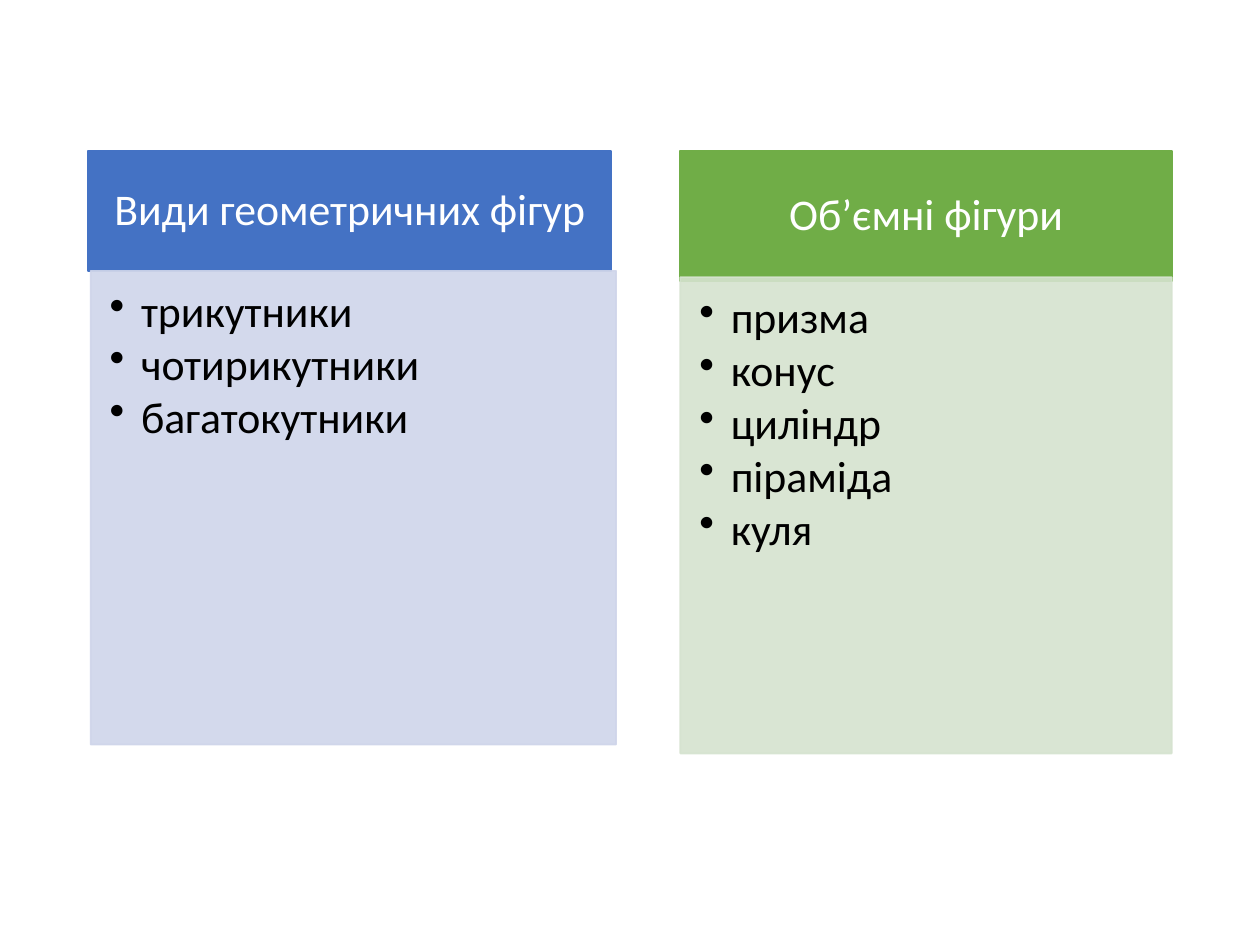
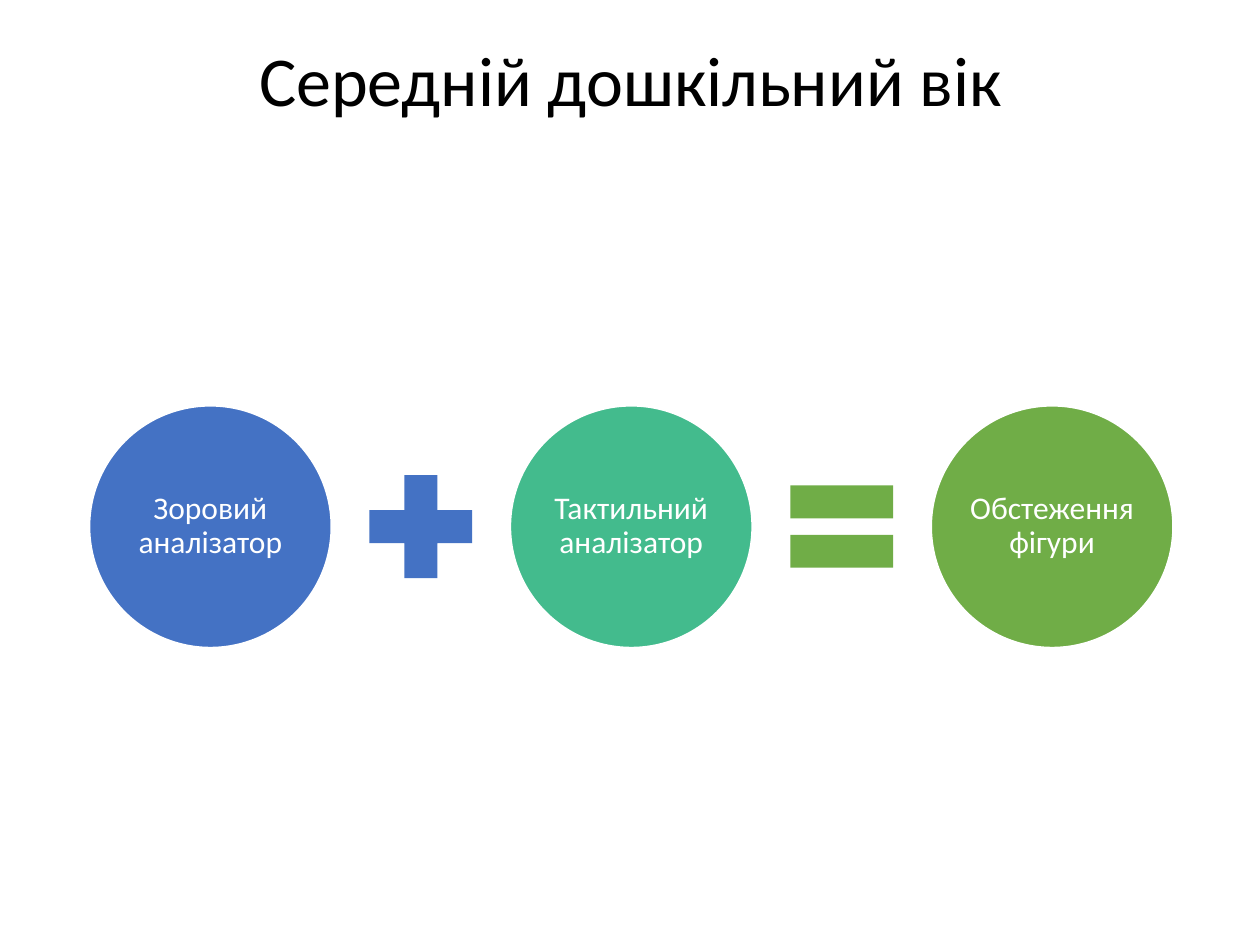
import pptx
import pptx.util
import pptx.dml.color
import pptx.enum.shapes
import pptx.enum.text
import pptx.oxml
import pptx.oxml.ns
from pptx.util import Inches

RGBColor = pptx.dml.color.RGBColor
MSO_SHAPE = pptx.enum.shapes.MSO_SHAPE
PP_ALIGN = pptx.enum.text.PP_ALIGN
MSO_ANCHOR = pptx.enum.text.MSO_ANCHOR

BLUE = RGBColor(0x44, 0x72, 0xC4)
TEAL = RGBColor(0x43, 0xBB, 0x8D)
GREEN = RGBColor(0x70, 0xAD, 0x47)
PALE_BLUE = RGBColor(0xCF, 0xD5, 0xEA)
PALE_GREEN = RGBColor(0xD5, 0xE3, 0xCF)
WHITE = RGBColor(0xFF, 0xFF, 0xFF)
BLACK = RGBColor(0x00, 0x00, 0x00)
FONT = "Calibri"


def add_figure(slide, kind, box, fill, line=None):
    shape = slide.shapes.add_shape(kind, *[Inches(length) for length in box])
    shape.shadow.inherit = False
    shape.fill.solid()
    shape.fill.fore_color.rgb = fill
    if line is None:
        shape.line.fill.background()
    else:
        shape.line.color.rgb = line
        shape.line.width = pptx.util.Pt(1)
    return shape


def write_text(shape, lines, size, color, insets, centered=True):
    frame = shape.text_frame
    frame.word_wrap = True
    frame.vertical_anchor = MSO_ANCHOR.MIDDLE if centered else MSO_ANCHOR.TOP
    frame.margin_left, frame.margin_top, frame.margin_right, frame.margin_bottom = [
        Inches(inset) for inset in insets
    ]
    frame.text = "\n".join(lines)
    for paragraph in frame.paragraphs:
        paragraph.alignment = PP_ALIGN.CENTER if centered else PP_ALIGN.LEFT
        paragraph.line_spacing = 0.9
        if not centered:
            paragraph.space_after = pptx.util.Pt(3.2)
            properties = paragraph._p.get_or_add_pPr()
            properties.set("marL", str(Inches(0.25)))
            properties.set("indent", str(-Inches(0.25)))
            bullet = pptx.oxml.ns.qn("a:buChar")
            properties.append(properties.makeelement(bullet, {"char": "•"}))
        paragraph.font.name = FONT
        paragraph.font.size = pptx.util.Pt(size)
        paragraph.font.color.rgb = color


presentation = pptx.Presentation()
presentation.slide_width = Inches(10)
presentation.slide_height = Inches(7.5)
blank_layout = presentation.slide_layouts[6]

kinds_slide = presentation.slides.add_slide(blank_layout)
columns = [
    ("Види геометричних фігур", (0.7, 1.2, 4.15, 0.95), BLUE,
     ["трикутники", "чотирикутники", "багатокутники"],
     (0.72, 2.15, 4.17, 3.76), PALE_BLUE),
    ("Об’ємні фігури", (5.4, 1.2, 3.9, 1.03), GREEN,
     ["призма", "конус", "циліндр", "піраміда", "куля"],
     (5.4, 2.2, 3.9, 3.78), PALE_GREEN),
]
for heading, header_box, header_color, items, panel_box, panel_color in columns:
    header = add_figure(kinds_slide, MSO_SHAPE.RECTANGLE, header_box, header_color, header_color)
    write_text(header, [heading], 25, WHITE, (0.19, 0.11, 0.19, 0.11))
    panel = add_figure(kinds_slide, MSO_SHAPE.RECTANGLE, panel_box, panel_color, panel_color)
    for color in panel._element.spPr.iter(pptx.oxml.ns.qn("a:srgbClr")):
        color.append(color.makeelement(pptx.oxml.ns.qn("a:alpha"), {"val": "90000"}))
    write_text(panel, items, 25, BLACK, (0.15, 0.15, 0.19, 0.22), centered=False)

age_slide = presentation.slides.add_slide(blank_layout)
title = age_slide.shapes.add_textbox(Inches(0.72), Inches(0.13), Inches(8.57), Inches(1.07))
write_text(title, ["Середній дошкільний вік"], 40, BLACK, (0.1, 0.05, 0.1, 0.05))

CIRCLE_SIZE = 1.92
SIGN_SIZE = 1.11
CIRCLE_LEFT = 0.71
STEP = 3.34
MIDDLE = 4.18
circles = [
    ("Зоровий аналізатор", BLUE),
    ("Тактильний аналізатор", TEAL),
    ("Обстеження фігури", GREEN),
]
for index, (label, color) in enumerate(circles):
    box = (CIRCLE_LEFT + index * STEP, MIDDLE - CIRCLE_SIZE / 2, CIRCLE_SIZE, CIRCLE_SIZE)
    circle = add_figure(age_slide, MSO_SHAPE.OVAL, box, color, WHITE)
    write_text(circle, [label], 18, WHITE, (0.02, 0.02, 0.02, 0.02))

sign_left = CIRCLE_LEFT + (CIRCLE_SIZE + STEP - SIGN_SIZE) / 2
signs = [(MSO_SHAPE.MATH_PLUS, BLUE), (MSO_SHAPE.MATH_EQUAL, GREEN)]
for index, (kind, color) in enumerate(signs):
    box = (sign_left + index * STEP, MIDDLE - SIGN_SIZE / 2, SIGN_SIZE, SIGN_SIZE)
    add_figure(age_slide, kind, box, color)

presentation.save("out.pptx")
